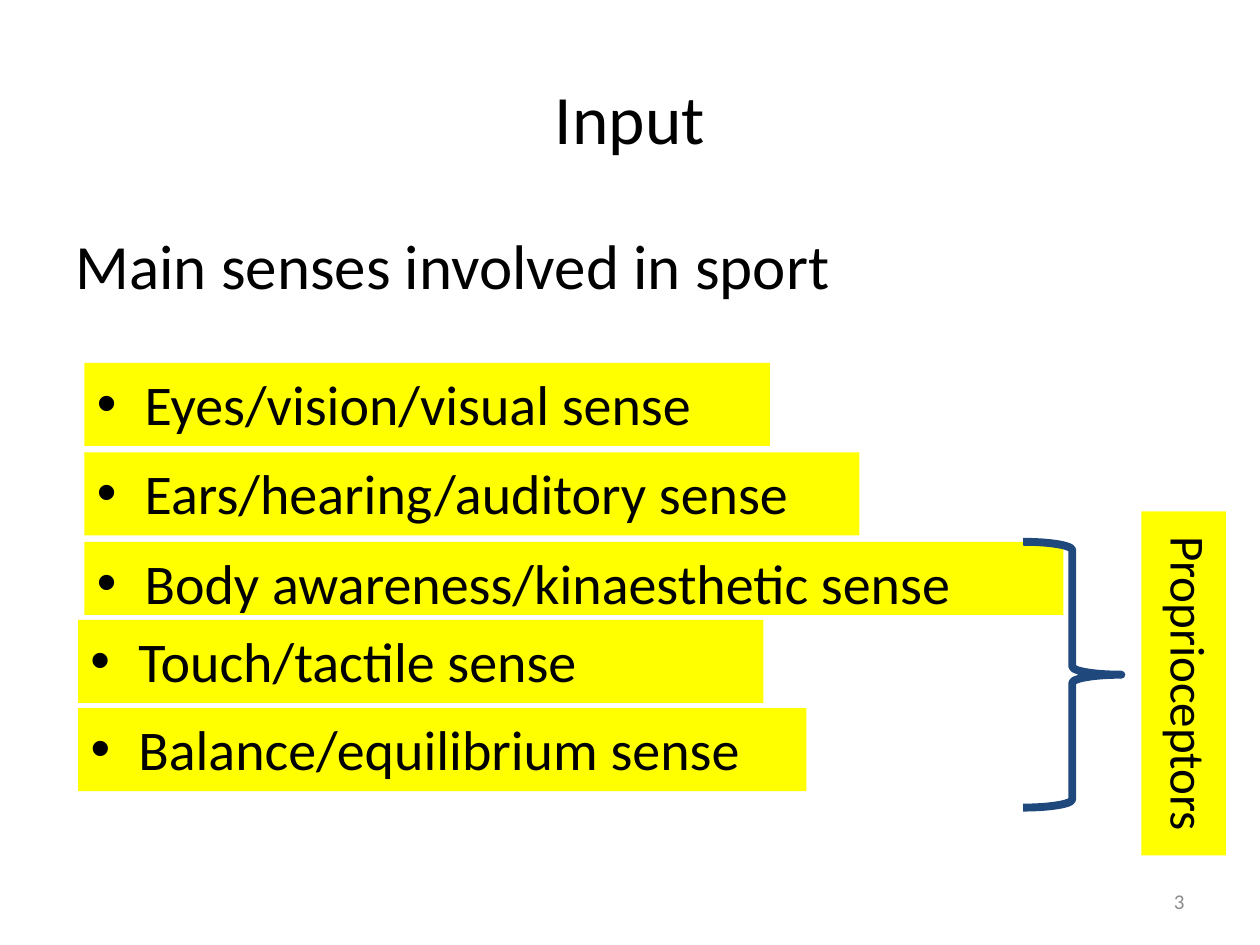
from lxml.etree import SubElement
from pptx import Presentation
from pptx.dml.color import RGBColor
from pptx.enum.shapes import MSO_SHAPE as Shape
from pptx.enum.text import MSO_ANCHOR as Anchor, PP_ALIGN as Align
from pptx.oxml.ns import qn
from pptx.util import Inches, Pt

COLORS = {"text": "000000", "number": "8C8C8C", "highlight": "FFFF00", "brace": "1F497D"}
FONT = "Calibri"
INDENT = 0.38


def color(name):
    return RGBColor.from_string(COLORS[name])


def write(shape, text, size, align=Align.LEFT, anchor=Anchor.TOP, ink="text"):
    """Set one formatted line of text in a shape."""
    frame = shape.text_frame
    frame.word_wrap = True
    frame.vertical_anchor = anchor
    paragraph = frame.paragraphs[0]
    paragraph.text = text
    paragraph.alignment = align
    font = paragraph.runs[0].font
    font.name, font.size = FONT, Pt(size)
    font.color.rgb = color(ink)
    return paragraph


def add_label(slide, box, text, size, **style):
    shape = slide.shapes.add_textbox(*map(Inches, box))
    return write(shape, text, size, **style)


def add_highlight(slide, box):
    shape = slide.shapes.add_shape(Shape.RECTANGLE, *map(Inches, box))
    shape.shadow.inherit = False
    shape.fill.solid()
    shape.fill.fore_color.rgb = color("highlight")
    shape.line.fill.background()
    return shape


def add_bullet(paragraph):
    properties = paragraph._p.get_or_add_pPr()
    properties.set("marL", str(Inches(INDENT)))
    properties.set("indent", str(-Inches(INDENT)))
    SubElement(properties, qn("a:buFont")).set("typeface", "Arial")
    SubElement(properties, qn("a:buChar")).set("char", "•")


def add_senses(slide, left, top, pitch, senses):
    """Stack highlighted bullets; each sense is (text, width, height)."""
    for row, (text, width, height) in enumerate(senses):
        shape = add_highlight(slide, (left, top + row * pitch, width, height))
        add_bullet(write(shape, text, 32))


def add_proprioceptors(slide, left, top):
    """Brace around the lower senses, with its vertical label."""
    brace = slide.shapes.add_shape(
        Shape.RIGHT_BRACE, *map(Inches, (left, top + 0.24, 0.78, 2.11)))
    brace.shadow.inherit = False
    brace.fill.background()
    brace.line.color.rgb = color("brace")
    brace.line.width = Pt(4.5)
    label = add_highlight(slide, (left + 0.94, top, 0.67, 2.73))
    write(label, "Proprioceptors", 28, align=Align.CENTER)
    label.text_frame._txBody.bodyPr.set("vert", "vert")


def main():
    presentation = Presentation()
    presentation.slide_width, presentation.slide_height = Inches(10), Inches(7.5)
    slide = presentation.slides.add_slide(presentation.slide_layouts[6])

    add_label(slide, (7.17, 6.95, 2.33, 0.4), "3", 12,
              align=Align.RIGHT, anchor=Anchor.MIDDLE, ink="number")
    add_label(slide, (0.5, 0.59, 9, 0.67), "Input", 39.6,
              align=Align.CENTER, anchor=Anchor.MIDDLE)
    add_label(slide, (0.5, 1.75, 9, 4.95), "Main senses involved in sport", 36)
    add_senses(slide, 0.67, 2.88, 0.71, [
        ("Eyes/vision/visual sense", 5.44, 0.66),
        ("Ears/hearing/auditory sense", 6.15, 0.66),
        ("Body awareness/kinaesthetic sense", 7.77, 0.58),
    ])
    add_senses(slide, 0.62, 4.92, 0.7, [
        ("Touch/tactile sense", 5.44, 0.66),
        ("Balance/equilibrium sense", 5.78, 0.66),
    ])
    add_proprioceptors(slide, 8.12, 4.06)
    presentation.save("out.pptx")


if __name__ == "__main__":
    main()
